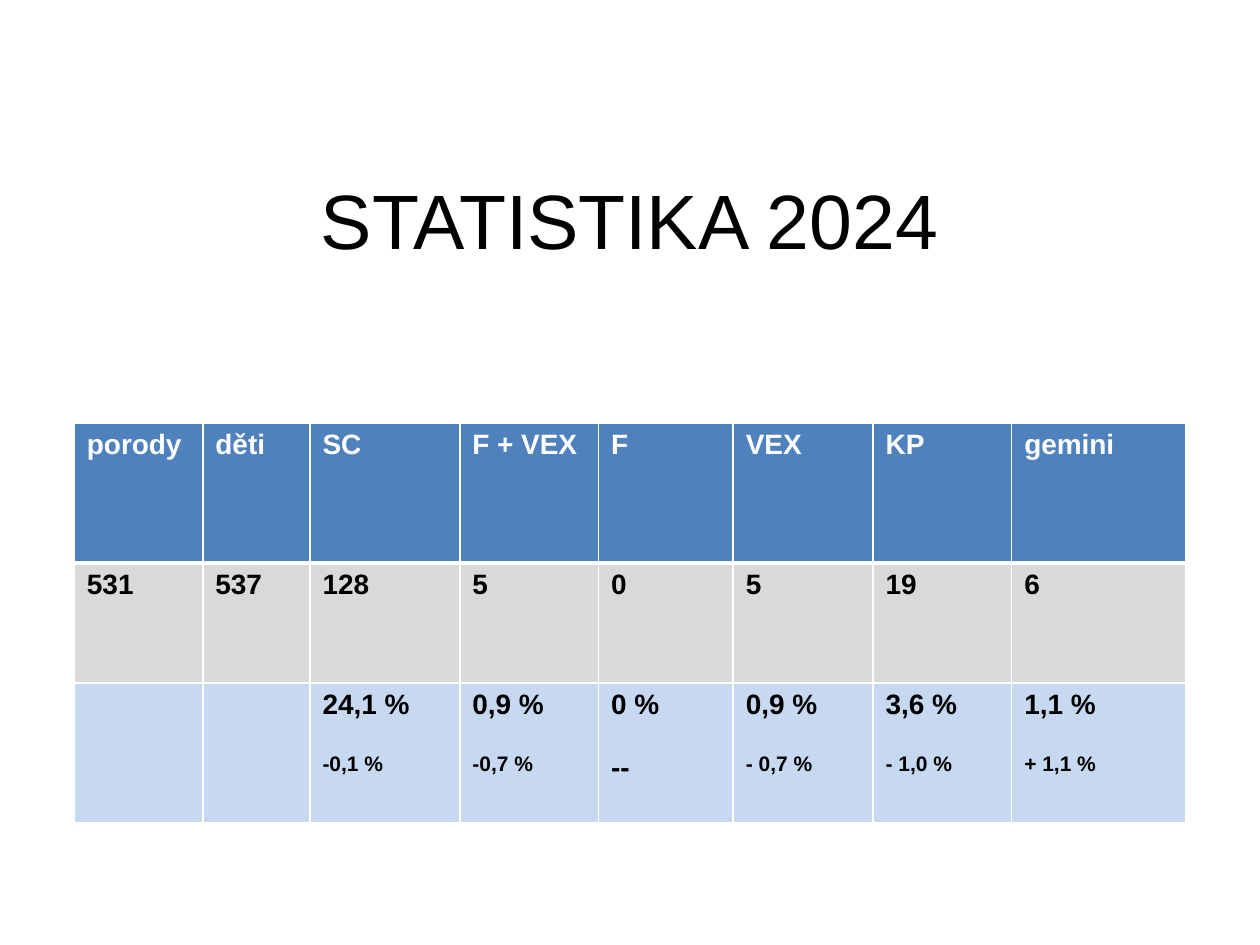
from lxml.etree import SubElement
from pptx import Presentation
from pptx.dml.color import RGBColor
from pptx.enum.text import MSO_ANCHOR as Anchor, PP_ALIGN as Align
from pptx.oxml.ns import qn
from pptx.util import Inches, Pt


def add_text(paragraph, text, size, color, bold):
    run = paragraph.add_run()
    run.text = text
    run.font.name = "Arial"
    run.font.size = Pt(size)
    run.font.bold = bold
    run.font.color.rgb = RGBColor.from_string(color)


def add_border(cell, side, width):
    line = SubElement(cell._tc.get_or_add_tcPr(), qn(f"a:ln{side}"), w=str(Pt(width)))
    fill = SubElement(line, qn("a:solidFill"))
    SubElement(fill, qn("a:srgbClr"), val="FFFFFF")


presentation = Presentation()
presentation.slide_width = Inches(10)
presentation.slide_height = Inches(7.5)
slide = presentation.slides.add_slide(presentation.slide_layouts[5])

title = slide.shapes.title
title.left, title.top = Inches(0.75), Inches(0.21)
title.width, title.height = Inches(8.5), Inches(3.73)
frame = title.text_frame
frame.vertical_anchor = Anchor.MIDDLE
frame.margin_left = frame.margin_top = frame.margin_right = 0
frame.margin_bottom = Inches(0.68)
frame.paragraphs[0].alignment = Align.CENTER
add_text(frame.paragraphs[0], "STATISTIKA 2024", 44, "000000", False)

column_widths = [1.02, 0.85, 1.19, 1.1, 1.07, 1.11, 1.1, 1.38]
row_heights = [1.11, 0.95, 1.11]
row_fills = ["4F81BD", "D9D9D9", "C6D9F1"]
row_colors = ["FFFFFF", "000000", "000000"]
headers = ["porody", "děti", "SC", "F + VEX", "F", "VEX", "KP", "gemini"]
counts = ["531", "537", "128", "5", "0", "5", "19", "6"]
shares = ["", "", "24,1 %", "0,9 %", "0 %", "0,9 %", "3,6 %", "1,1 %"]
changes = ["", "", "-0,1 %", "-0,7 %", "--", "- 0,7 %", "- 1,0 %", "+ 1,1 %"]

table = slide.shapes.add_table(
    3, 8, Inches(0.59), Inches(3.36), Inches(8.82), Inches(3.17)
).table
for column, width in zip(table.columns, column_widths):
    column.width = Inches(width)
for row, height in zip(table.rows, row_heights):
    row.height = Inches(height)

for row_index, values in enumerate([headers, counts, shares]):
    for column_index, value in enumerate(values):
        cell = table.cell(row_index, column_index)
        add_border(cell, "L", 0.96)
        add_border(cell, "R", 0.96)
        add_border(cell, "T", 3 if row_index == 1 else 0.96)
        add_border(cell, "B", 3 if row_index == 0 else 0.96)
        cell.fill.solid()
        cell.fill.fore_color.rgb = RGBColor.from_string(row_fills[row_index])
        if value:
            add_text(cell.text_frame.paragraphs[0], value, 16, row_colors[row_index], True)

for column_index, change in enumerate(changes):
    if change:
        paragraph = table.cell(2, column_index).text_frame.add_paragraph()
        paragraph.space_before = Pt(18.4)
        add_text(paragraph, change, 16 if change == "--" else 12, "000000", True)

presentation.save("out.pptx")
